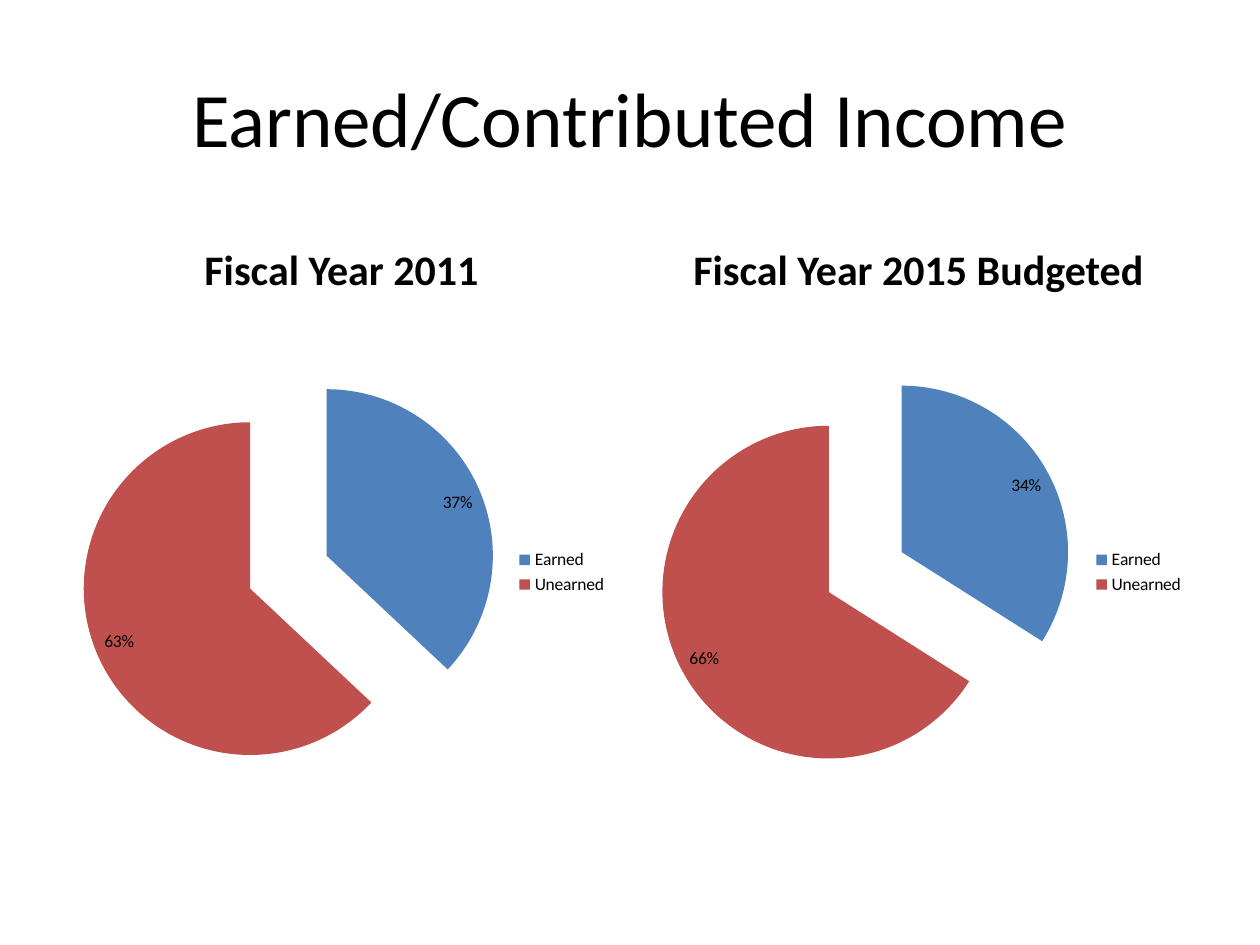
"""Build a slide comparing earned and contributed income in two pie charts."""
from dataclasses import dataclass

from lxml.etree import QName, Element
from pptx import Presentation
from pptx.chart.data import CategoryChartData
from pptx.dml.color import RGBColor
from pptx.enum.chart import XL_CHART_TYPE as ChartType
from pptx.enum.chart import XL_LABEL_POSITION as LabelPosition
from pptx.enum.chart import XL_LEGEND_POSITION as LegendPosition
from pptx.enum.text import MSO_ANCHOR as Anchor
from pptx.enum.text import PP_ALIGN as Align
from pptx.slide import Slide
from pptx.util import Cm, Pt


def color(value):
    return RGBColor.from_string(value)


@dataclass
class IncomeSlide:
    slide: Slide
    font: str = "Calibri"
    ink: str = "000000"
    slice_colors: tuple = ("4F81BD", "C0504D")

    def style(self, font, size, bold=False):
        font.name = self.font
        font.size = Pt(size)
        font.bold = bold
        font.color.rgb = color(self.ink)

    def text(self, index, content, box, size, anchor, bold=False):
        shape = self.slide.placeholders[index]
        shape.left, shape.top, shape.width, shape.height = map(Cm, box)
        frame = shape.text_frame
        frame.text = content
        frame.word_wrap = True
        frame.vertical_anchor = anchor
        paragraph = frame.paragraphs[0]
        paragraph.alignment = Align.CENTER
        self.style(paragraph.runs[0].font, size, bold)

    def pie(self, values, box, explosion=25):
        data = CategoryChartData()
        data.categories = ["Earned", "Unearned"]
        data.add_series("Series 1", values)
        chart = self.slide.shapes.add_chart(ChartType.PIE, *map(Cm, box), data).chart
        self.style(chart.font, 10)
        chart.has_title = False
        chart.has_legend = True
        chart.legend.position = LegendPosition.RIGHT
        chart.legend.include_in_layout = False

        plot = chart.plots[0]
        plot.vary_by_categories = True
        series = plot.series[0]
        for index, fill_color in enumerate(self.slice_colors):
            point = series.points[index]
            point.format.fill.solid()
            point.format.fill.fore_color.rgb = color(fill_color)
            point.format.line.fill.background()
        self.explode(series, explosion)

        plot.has_data_labels = True
        labels = plot.data_labels
        labels.show_value = False
        labels.show_percentage = True
        labels.number_format = "0%"
        labels.number_format_is_linked = False
        labels.position = LabelPosition.INSIDE_END
        self.style(labels.font, 10)

    def explode(self, series, percent):
        first_point = series.points[0].format.fill and series._element.dPt_lst[0]
        namespace = QName(first_point).namespace
        first_point.addprevious(Element(QName(namespace, "explosion"), val=str(percent)))

    def remove_placeholder(self, index):
        element = self.slide.placeholders[index].element
        element.getparent().remove(element)


def main():
    presentation = Presentation()
    presentation.slide_width, presentation.slide_height = Cm(25.4), Cm(19.05)
    slide = presentation.slides.add_slide(presentation.slide_layouts[4])
    page = IncomeSlide(slide)
    page.text(0, "Earned/Contributed Income", (1.27, 0.76, 22.86, 3.18), 44, Anchor.MIDDLE)

    column_width = 11.23
    columns = [
        (1, 2, 1.27, "Fiscal Year 2011", (37, 63)),
        (3, 4, 12.9, "Fiscal Year 2015 Budgeted", (34, 66)),
    ]
    for heading_index, content_index, left, heading, values in columns:
        page.text(heading_index, heading, (left, 4.27, column_width, 1.78), 24, Anchor.BOTTOM, True)
        page.remove_placeholder(content_index)
        page.pie(values, (left, 6.05, column_width, 10.97))

    presentation.save("out.pptx")


if __name__ == "__main__":
    main()
